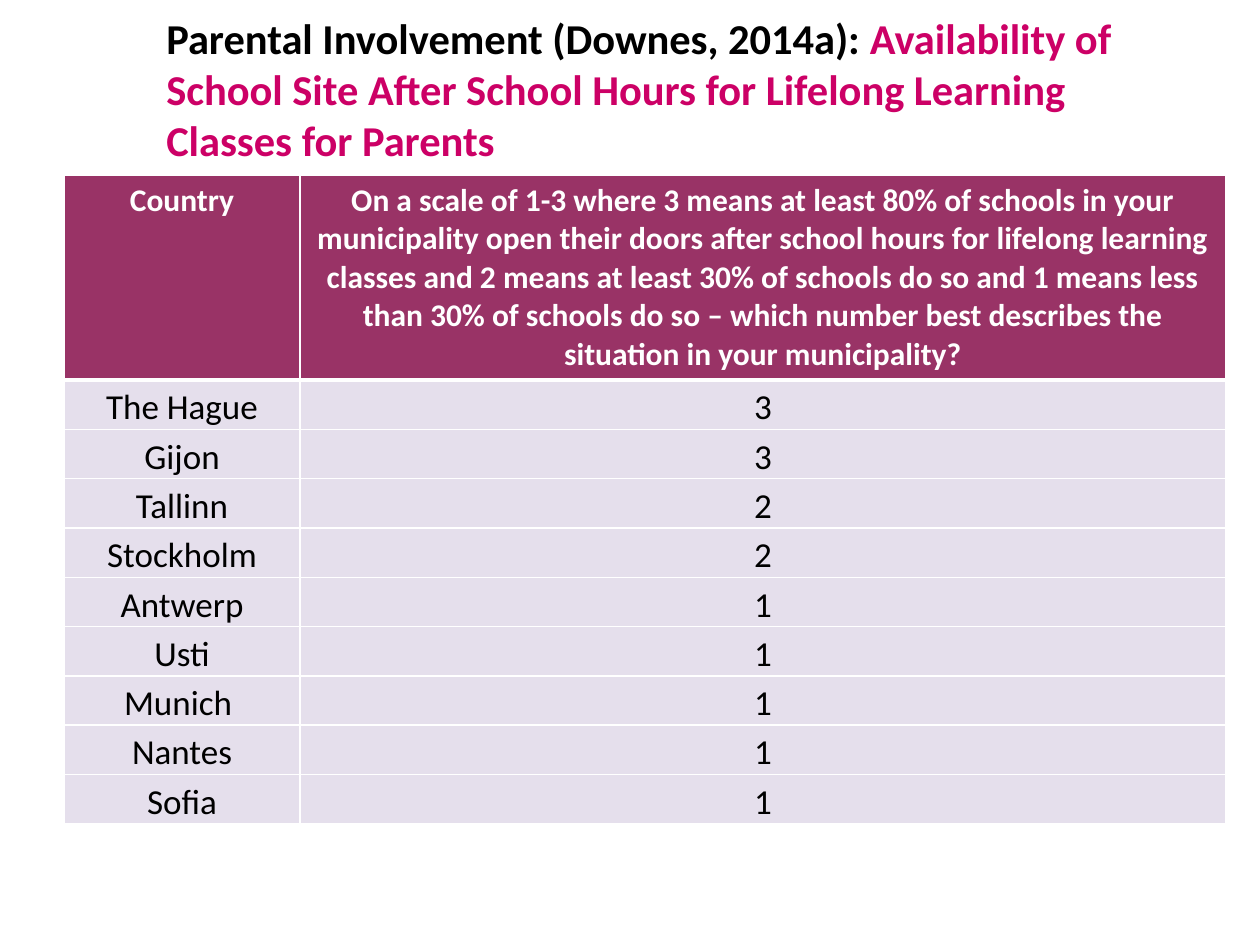
import pptx
import pptx.dml.color
import pptx.enum.text
import pptx.oxml
import pptx.oxml.ns
import pptx.util
from pptx.util import Inches

BLACK = pptx.dml.color.RGBColor(0x00, 0x00, 0x00)
WHITE = pptx.dml.color.RGBColor(0xFF, 0xFF, 0xFF)
PINK = pptx.dml.color.RGBColor(0xCC, 0x00, 0x66)
PLUM = pptx.dml.color.RGBColor(0x99, 0x33, 0x66)
LILAC = pptx.dml.color.RGBColor(0xE5, 0xDF, 0xEC)

HEADINGS = (
    "Country",
    "On a scale of 1-3 where 3 means at least 80% of schools in your "
    "municipality open their doors after school hours for lifelong learning "
    "classes and 2 means at least 30% of schools do so and 1 means less than "
    "30% of schools do so – which number best describes the situation in "
    "your municipality?",
)
RATINGS = (
    ("The Hague", "3"),
    ("Gijon", "3"),
    ("Tallinn", "2"),
    ("Stockholm", "2"),
    ("Antwerp", "1"),
    ("Usti", "1"),
    ("Munich ", "1"),
    ("Nantes", "1"),
    ("Sofia", "1"),
)


def write(paragraph, text, size=20, color=BLACK, bold=False,
          align=pptx.enum.text.PP_ALIGN.CENTER, line_spacing=1.0):
    paragraph.alignment = align
    paragraph.line_spacing = line_spacing
    run = paragraph.add_run()
    run.text = text
    run.font.name = "Calibri"
    run.font.size = pptx.util.Pt(size)
    run.font.bold = bold
    run.font.color.rgb = color


def add_borders(cell, top=1, bottom=1):
    properties = cell._tc.get_or_add_tcPr()
    for side, width in (("L", 1), ("R", 1), ("T", top), ("B", bottom)):
        properties.append(pptx.oxml.parse_xml(
            f'<a:ln{side} {pptx.oxml.ns.nsdecls("a")} w="{pptx.util.Pt(width)}">'
            f'<a:solidFill><a:srgbClr val="{WHITE}"/></a:solidFill></a:ln{side}>'))


def style_cell(cell, fill, **borders):
    add_borders(cell, **borders)
    cell.fill.solid()
    cell.fill.fore_color.rgb = fill


def add_title(slide):
    title = slide.shapes.title
    title.left, title.top = Inches(1.22), Inches(0.52)
    title.width, title.height = Inches(8.13), Inches(0.77)
    frame = title.text_frame
    frame.word_wrap = True
    frame.auto_size = pptx.enum.text.MSO_AUTO_SIZE.NONE
    frame.vertical_anchor = pptx.enum.text.MSO_ANCHOR.MIDDLE
    frame.margin_bottom = Inches(0.46)
    heading = frame.paragraphs[0]
    style = {"size": 24.3, "bold": True, "align": pptx.enum.text.PP_ALIGN.LEFT}
    write(heading, "Parental Involvement (Downes, 2014a): ", **style)
    write(heading, "Availability of School Site After School Hours for "
          "Lifelong Learning Classes for Parents", color=PINK, **style)


def add_ratings_table(slide):
    header_height, row_height = Inches(1.6), Inches(0.39)
    ratings = slide.shapes.add_table(
        len(RATINGS) + 1, len(HEADINGS), Inches(0.51), Inches(1.39),
        Inches(9.22), header_height + row_height * len(RATINGS)).table
    for column, width in zip(ratings.columns, (1.87, 7.35)):
        column.width = Inches(width)

    ratings.rows[0].height = header_height
    for cell, heading in zip(ratings.rows[0].cells, HEADINGS):
        style_cell(cell, PLUM, bottom=3)
        write(cell.text_frame.paragraphs[0], heading, size=18, color=WHITE,
              bold=True)

    for number, values in enumerate(RATINGS, start=1):
        row = ratings.rows[number]
        row.height = row_height
        for cell, value in zip(row.cells, values):
            style_cell(cell, LILAC, top=3 if number == 1 else 1)
            cell.margin_left = cell.margin_right = Inches(0.07)
            cell.margin_top = cell.margin_bottom = 0
            write(cell.text_frame.paragraphs[0], value, line_spacing=1.15)


def main():
    presentation = pptx.Presentation()
    presentation.slide_width = Inches(10)
    presentation.slide_height = Inches(7.5)
    slide = presentation.slides.add_slide(presentation.slide_layouts[5])
    add_title(slide)
    add_ratings_table(slide)
    presentation.save("out.pptx")


if __name__ == "__main__":
    main()
